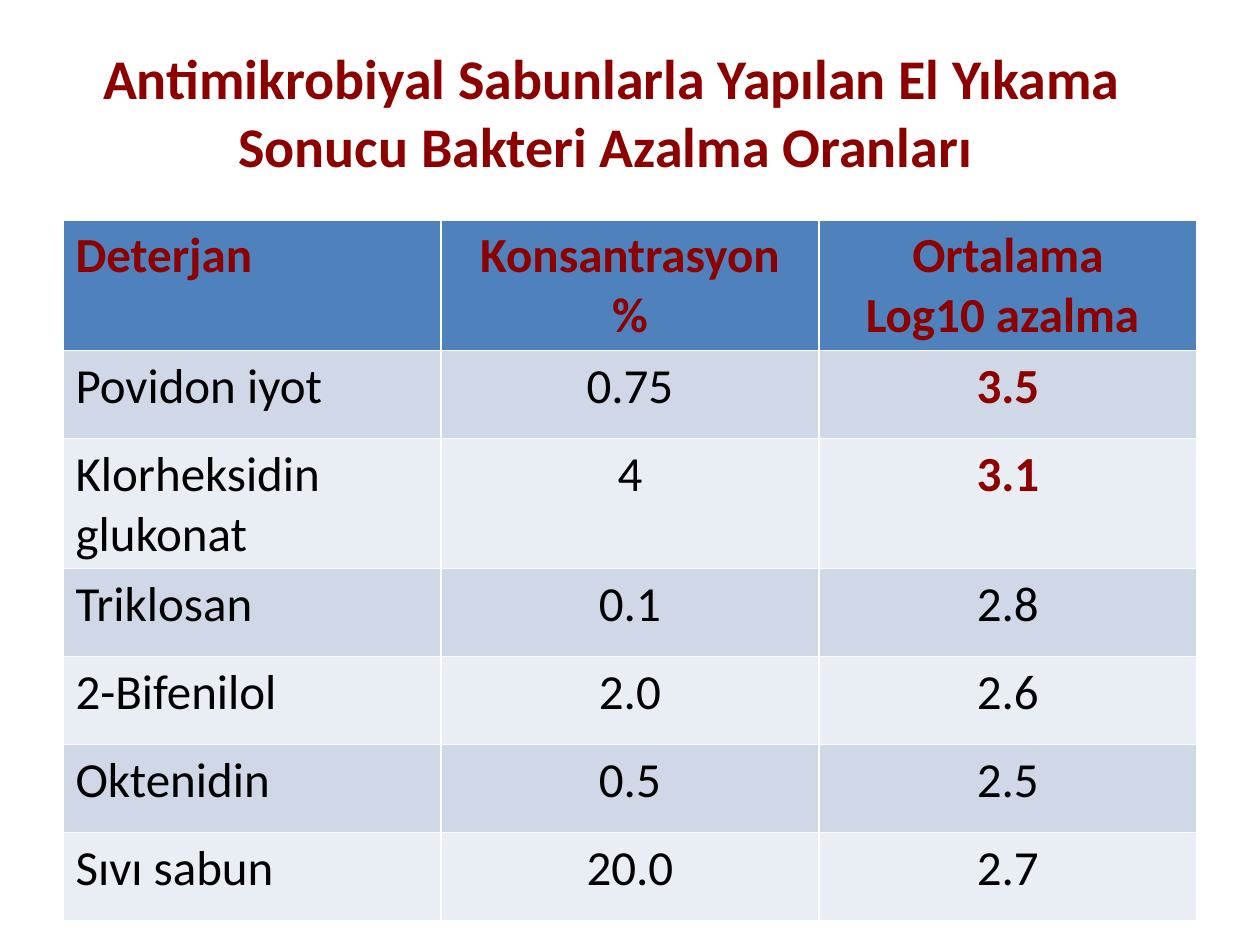
"""Build a slide with a table of bacterial reduction rates for antimicrobial soaps."""
from dataclasses import dataclass

from pptx import Presentation
from pptx.dml.color import RGBColor as Rgb
from pptx.enum.text import MSO_ANCHOR as Anchor, PP_ALIGN as Align

TITLE = "Antimikrobiyal Sabunlarla Yapılan El Yıkama Sonucu Bakteri Azalma Oranları "
HEADER = ("Deterjan", "Konsantrasyon\n%", "Ortalama\nLog10 azalma ")
SOAPS = [
    ("Povidon iyot", "0.75", "3.5"),
    ("Klorheksidin glukonat", "4", "3.1"),
    ("Triklosan", "0.1", "2.8"),
    ("2-Bifenilol", "2.0", "2.6"),
    ("Oktenidin", "0.5", "2.5"),
    ("Sıvı sabun", "20.0", "2.7"),
]
HIGHLIGHTS = {"3.5", "3.1"}

PX = 914400 // 126
PAGE_SIZE = (1260, 945)
TITLE_BOX = (45, 32, 1134, 158)
TABLE_LEFT, TABLE_TOP = 63, 220
COLUMN_WIDTH, ROW_HEIGHT = 378, 88


@dataclass(frozen=True)
class Theme:
    font: str = "Calibri"
    accent: str = "8C0000"
    text: str = "000000"
    header_fill: str = "4F81BD"
    bands: tuple = ("D0D8E8", "E9EDF4")
    title_size: int = 32
    table_size: int = 28


THEME = Theme()


def px(*lengths):
    return [length * PX for length in lengths]


def write(frame, text, size, align, strong):
    frame.text = text
    for para in frame.paragraphs:
        para.alignment = align
        for span in para.runs:
            span.font.name = THEME.font
            span.font.size = size * 12700
            span.font.bold = strong
            span.font.color.rgb = Rgb.from_string(THEME.accent if strong else THEME.text)


def add_title(page):
    frame = page.shapes.add_textbox(*px(*TITLE_BOX)).text_frame
    frame.word_wrap = True
    frame.vertical_anchor = Anchor.MIDDLE
    write(frame, TITLE, THEME.title_size, Align.CENTER, True)


def add_soap_table(page):
    rows = [HEADER, *SOAPS]
    width, height = COLUMN_WIDTH * len(HEADER), ROW_HEIGHT * len(rows)
    place = px(TABLE_LEFT, TABLE_TOP, width, height)
    table = page.shapes.add_table(len(rows), len(HEADER), *place).table
    for row_index, values in enumerate(rows):
        is_header = row_index == 0
        fill = THEME.header_fill if is_header else THEME.bands[(row_index - 1) % 2]
        for column_index, value in enumerate(values):
            cell = table.cell(row_index, column_index)
            cell.fill.solid()
            cell.fill.fore_color.rgb = Rgb.from_string(fill)
            align = Align.CENTER if column_index else Align.LEFT
            strong = is_header or value in HIGHLIGHTS
            write(cell.text_frame, value, THEME.table_size, align, strong)


def main():
    deck = Presentation()
    deck.slide_width, deck.slide_height = px(*PAGE_SIZE)
    page = deck.slides.add_slide(deck.slide_layouts[6])
    add_title(page)
    add_soap_table(page)
    deck.save("out.pptx")


if __name__ == "__main__":
    main()
